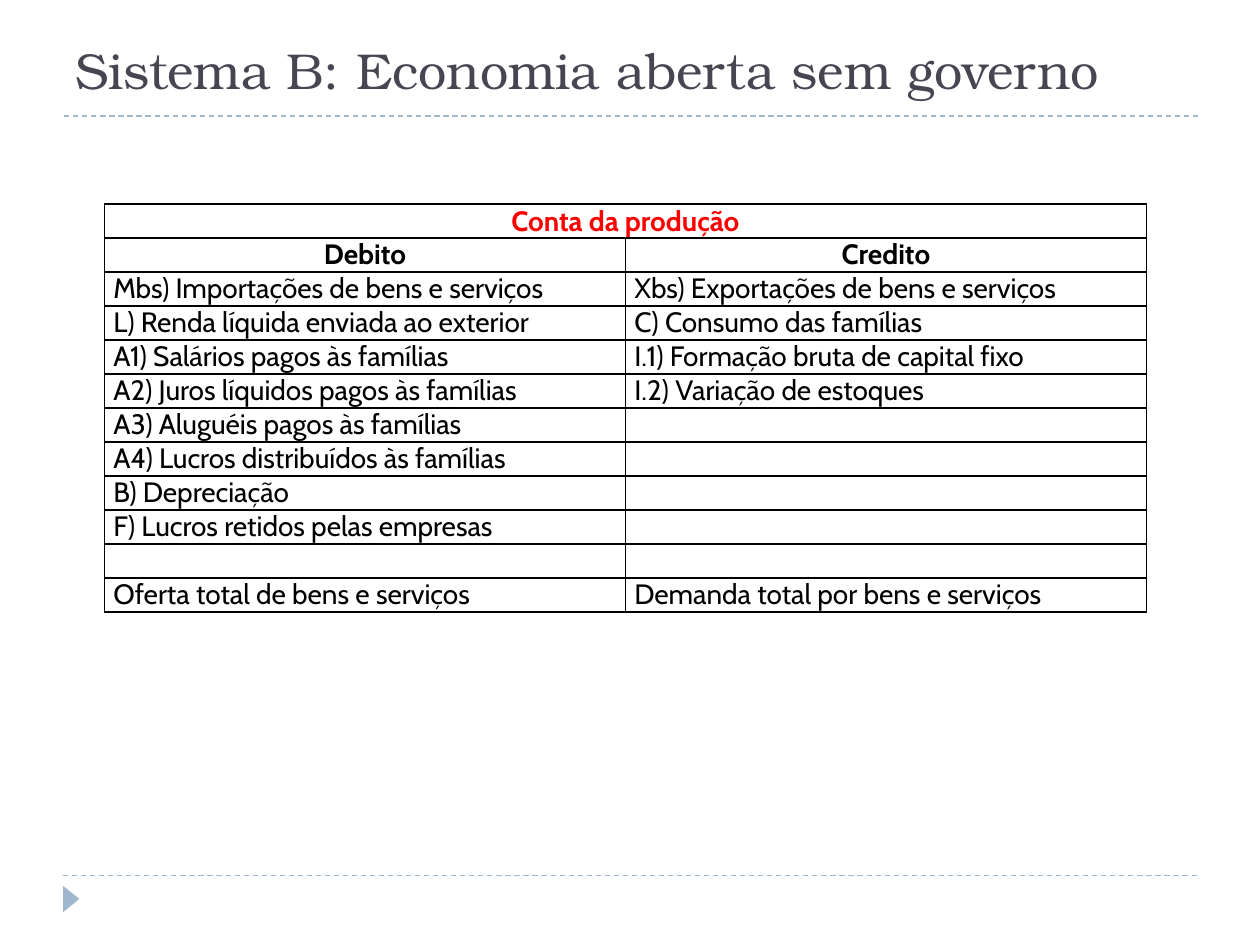
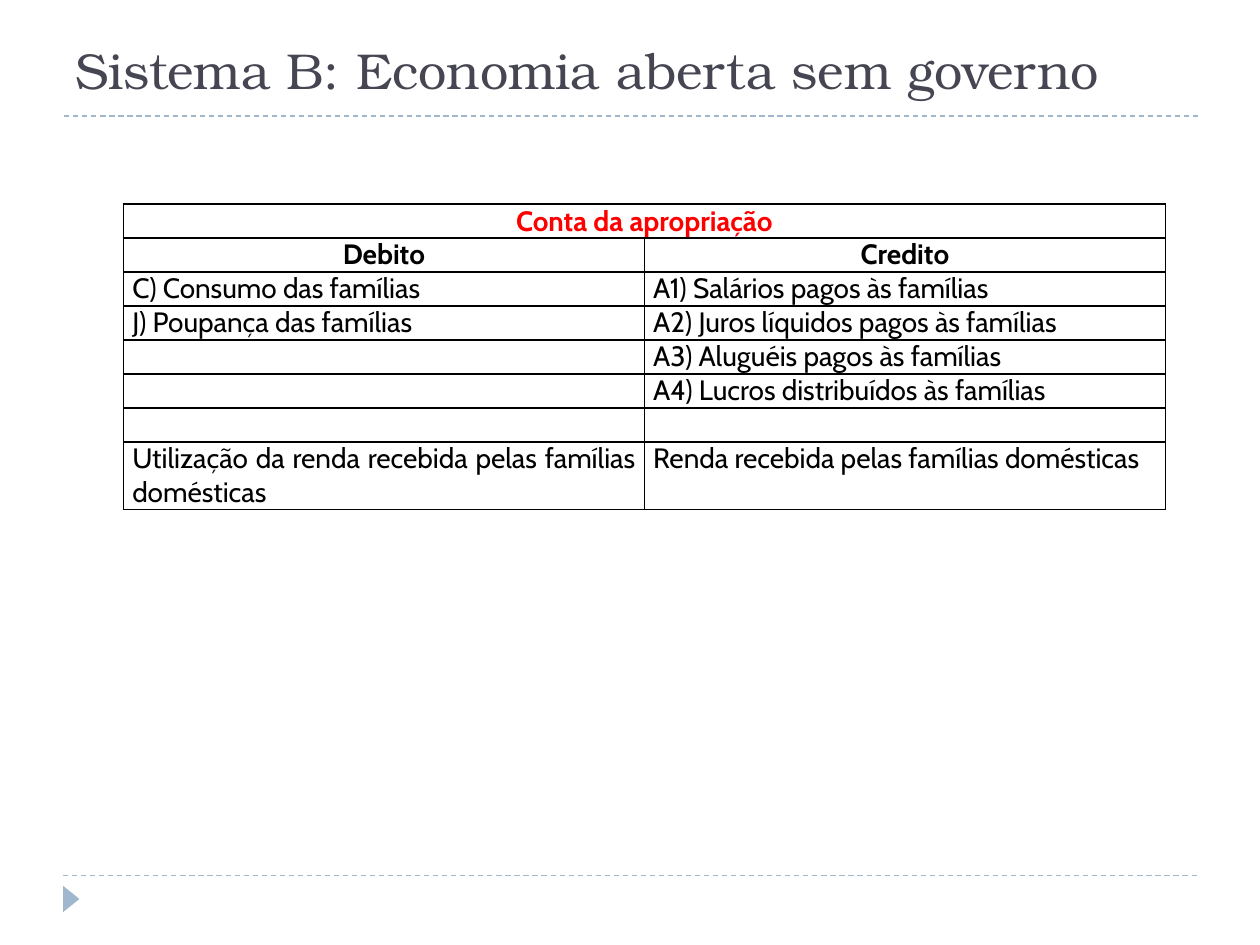
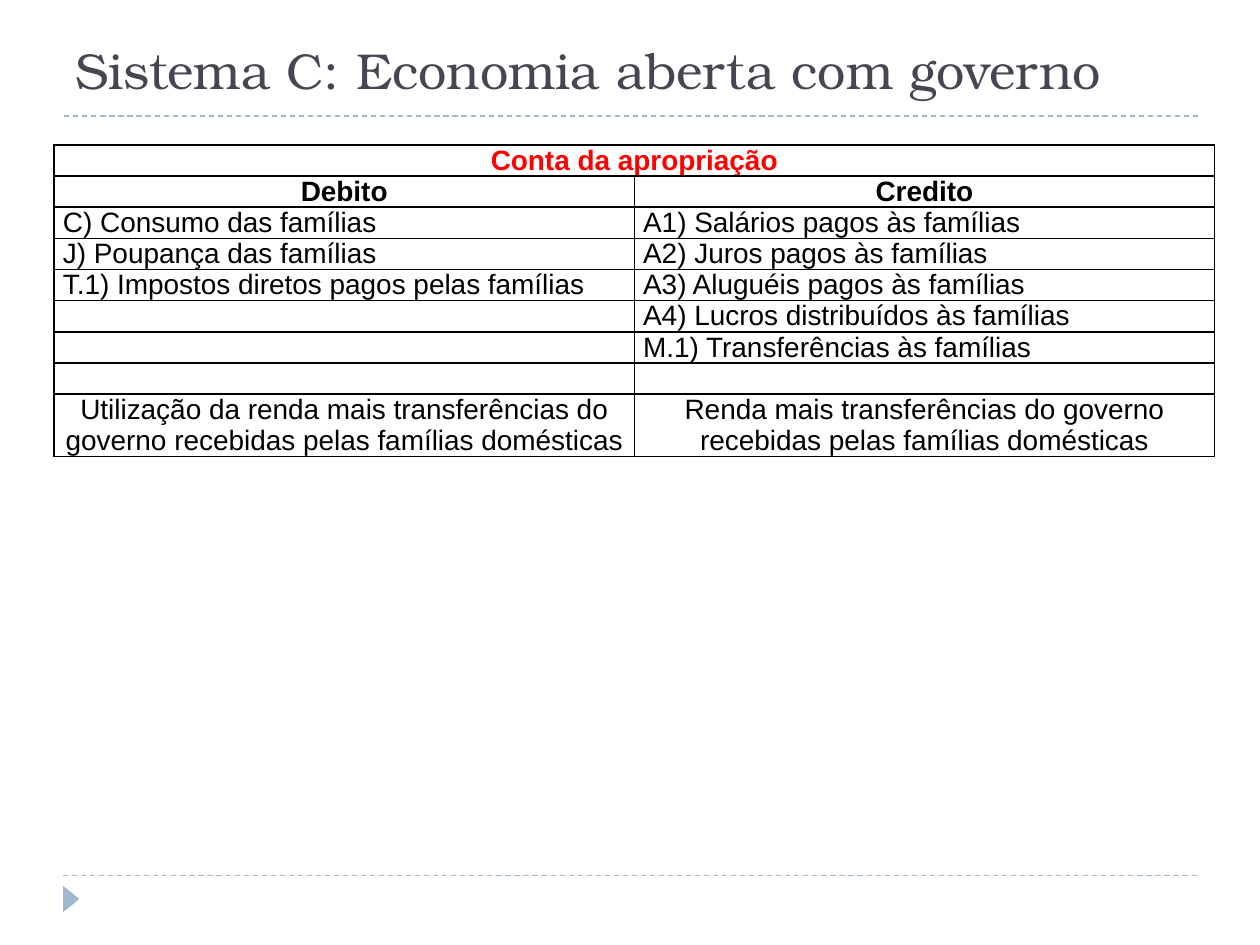
from dataclasses import dataclass

from lxml.etree import SubElement
from pptx import Presentation
from pptx.dml.color import RGBColor
from pptx.enum.dml import MSO_LINE
from pptx.enum.shapes import MSO_CONNECTOR, MSO_SHAPE
from pptx.enum.text import MSO_ANCHOR, MSO_AUTO_SIZE, PP_ALIGN as Align
from pptx.oxml.ns import qn
from pptx.util import Inches, Pt

WIDTH, HEIGHT = Inches(10), Inches(7.5)
GRID_COLUMNS, GRID_ROWS = 100, 75
COLORS = {
    "title": "464653",
    "accent": "9FB8CD",
    "heading": "FF0000",
    "text": "000000",
}
TITLE_FONT = "TeX Gyre Bonum"
TITLE_SIZE, TABLE_SIZE = 28.8, 16
BORDER_WIDTH = 1
SIDE_MARGIN = 0.7


@dataclass(frozen=True)
class Rule:
    left: float
    top: float
    width: float = 90


@dataclass(frozen=True)
class Account:
    title: str
    heading: str
    entries: tuple[tuple[str, str], ...]
    left: float
    top: float
    width: float = 82.7
    row_height: float = 2.7
    font: str = "Cabin"
    closing_align: Align = Align.JUSTIFY


RULES = (Rule(5, 69.5), Rule(5.1, 9.2))

SYSTEM_B = "Sistema B: Economia aberta sem governo"
SYSTEM_C = "Sistema C: Economia aberta com governo"

ACCOUNTS = (
    Account(
        SYSTEM_B, "Conta da produção",
        (
            ("Mbs) Importações de bens e serviços", "Xbs) Exportações de bens e serviços"),
            ("L) Renda líquida enviada ao exterior", "C) Consumo das famílias"),
            ("A1) Salários pagos às famílias", "I.1) Formação bruta de capital fixo"),
            ("A2) Juros líquidos pagos às famílias", "I.2) Variação de estoques"),
            ("A3) Aluguéis pagos às famílias", ""),
            ("A4) Lucros distribuídos às famílias", ""),
            ("B) Depreciação", ""),
            ("F) Lucros retidos pelas empresas", ""),
            ("", ""),
            ("Oferta total de bens e serviços", "Demanda total por bens e serviços"),
        ),
        left=8.3, top=16.2,
    ),
    Account(
        SYSTEM_B, "Conta da apropriação",
        (
            ("C) Consumo das famílias", "A1) Salários pagos às famílias"),
            ("J) Poupança das famílias", "A2) Juros líquidos pagos às famílias"),
            ("", "A3) Aluguéis pagos às famílias"),
            ("", "A4) Lucros distribuídos às famílias"),
            ("", ""),
            ("Utilização da renda recebida pelas famílias domésticas",
             "Renda recebida pelas famílias domésticas"),
        ),
        left=9.8, top=16.2,
    ),
    Account(
        SYSTEM_C, "Conta da apropriação",
        (
            ("C) Consumo das famílias", "A1) Salários pagos às famílias"),
            ("J) Poupança das famílias", "A2) Juros pagos às famílias"),
            ("T.1) Impostos diretos pagos pelas famílias", "A3) Aluguéis pagos às famílias"),
            ("", "A4) Lucros distribuídos às famílias"),
            ("", "M.1) Transferências às famílias"),
            ("", ""),
            ("Utilização da renda mais transferências do governo recebidas pelas famílias domésticas",
             "Renda mais transferências do governo recebidas pelas famílias domésticas"),
        ),
        left=4.3, top=11.5, width=92.1, row_height=2.4,
        font="Arial", closing_align=Align.CENTER,
    ),
)


def across(columns: float) -> int:
    return round(WIDTH * columns / GRID_COLUMNS)


def down(rows: float) -> int:
    return round(HEIGHT * rows / GRID_ROWS)


def color(name: str) -> RGBColor:
    return RGBColor.from_string(COLORS[name])


def write(text_frame, text: str, *, font: str, size: float, color_name: str = "text",
          bold: bool = False, align: Align = Align.LEFT) -> None:
    paragraph = text_frame.paragraphs[0]
    paragraph.alignment = align
    if not text:
        ending = SubElement(paragraph._p, qn("a:endParaRPr"), sz=str(round(size * 100)))
        SubElement(ending, qn("a:latin"), typeface=font)
        return
    run = paragraph.add_run()
    run.text = text
    run.font.name = font
    run.font.size = Pt(size)
    run.font.bold = bold
    run.font.color.rgb = color(color_name)


def add_rule(slide, rule: Rule) -> None:
    left, top = across(rule.left), down(rule.top)
    line = slide.shapes.add_connector(
        MSO_CONNECTOR.STRAIGHT, left, top, left + across(rule.width), top)
    line.line.color.rgb = color("accent")
    line.line.width = Pt(0.75)
    line.line.dash_style = MSO_LINE.DASH
    SubElement(line._element.spPr, qn("a:effectLst"))


def add_frame(slide) -> None:
    for rule in RULES:
        add_rule(slide, rule)
    marker = slide.shapes.add_shape(
        MSO_SHAPE.ISOSCELES_TRIANGLE, across(4.6), down(70.7), across(2.1), down(1.3))
    marker.rotation = 90
    marker.shadow.inherit = False
    marker.fill.solid()
    marker.fill.fore_color.rgb = color("accent")
    marker.line.fill.background()


def set_title(slide, text: str) -> None:
    title = slide.shapes.title
    title.left, title.top = across(5), down(1.7)
    title.width, title.height = across(90), down(6.7)
    text_frame = title.text_frame
    text_frame.auto_size = MSO_AUTO_SIZE.NONE
    text_frame.vertical_anchor = MSO_ANCHOR.BOTTOM
    write(text_frame, text, font=TITLE_FONT, size=TITLE_SIZE, color_name="title")


def format_cell(cell) -> None:
    cell.margin_left = cell.margin_right = across(SIDE_MARGIN)
    cell.margin_top = cell.margin_bottom = 0
    properties = cell._tc.get_or_add_tcPr()
    for side in ("lnL", "lnR", "lnT", "lnB"):
        border = SubElement(properties, qn(f"a:{side}"), w=str(Pt(BORDER_WIDTH)))
        fill = SubElement(border, qn("a:solidFill"))
        SubElement(fill, qn("a:srgbClr"), val=COLORS["text"])
    cell.fill.background()


def add_account(slide, account: Account) -> None:
    rows = ((account.heading, ""), ("Debito", "Credito"), *account.entries)
    table = slide.shapes.add_table(
        len(rows), 2, across(account.left), down(account.top),
        across(account.width), down(account.row_height * len(rows))).table
    table.first_row = table.horz_banding = False
    table.cell(0, 0).merge(table.cell(0, 1))
    for row_index, texts in enumerate(rows):
        table.rows[row_index].height = down(account.row_height)
        is_header = row_index < 2
        if is_header:
            align = Align.CENTER
        elif row_index == len(rows) - 1:
            align = account.closing_align
        else:
            align = Align.JUSTIFY
        for column_index, text in enumerate(texts):
            cell = table.cell(row_index, column_index)
            format_cell(cell)
            write(cell.text_frame, text, font=account.font, size=TABLE_SIZE,
                  color_name="heading" if row_index == 0 else "text",
                  bold=is_header, align=align)


def main() -> None:
    presentation = Presentation()
    presentation.slide_width, presentation.slide_height = WIDTH, HEIGHT
    title_only = presentation.slide_layouts.get_by_name("Title Only")
    for account in ACCOUNTS:
        slide = presentation.slides.add_slide(title_only)
        add_frame(slide)
        set_title(slide, account.title)
        add_account(slide, account)
    presentation.save("out.pptx")


if __name__ == "__main__":
    main()
